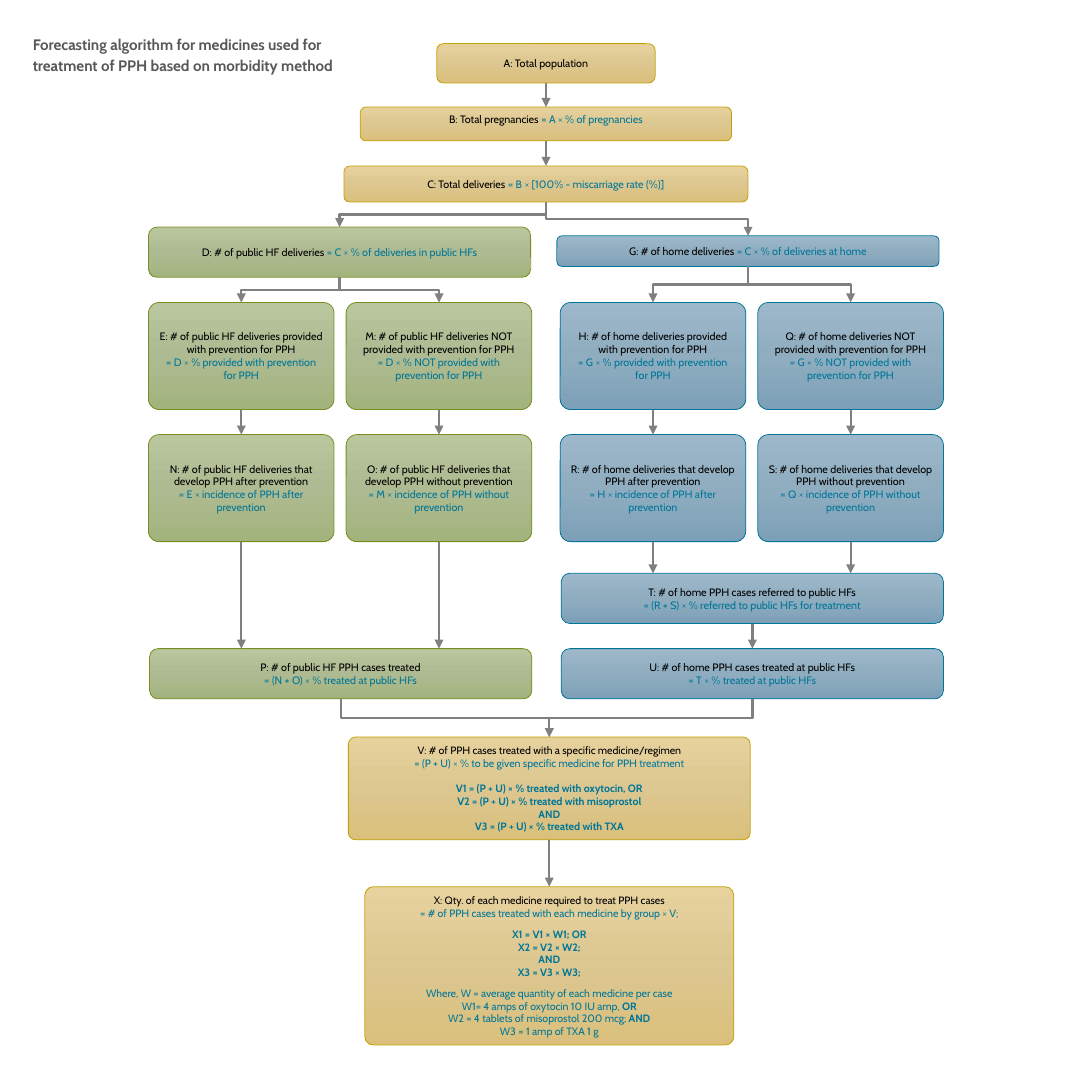
from copy import deepcopy

from pptx import Presentation
from pptx.dml.color import RGBColor as RGB
from pptx.enum.shapes import MSO_CONNECTOR as LINK, MSO_SHAPE as SHAPE
from pptx.enum.text import MSO_ANCHOR as ANCHOR, MSO_AUTO_SIZE as AUTO, PP_ALIGN as ALIGN
from pptx.oxml.ns import qn
from pptx.oxml.xmlchemy import OxmlElement as Node
from pptx.util import Inches, Pt

FONT = "Cabin"
BLACK, TEAL, GREY = "000000", "007698", "808080"
GOLD = ("C2A204", "E7D19D", "DDC790", "DAC07C")
GREEN = ("788E1E", "BAC69E", "AEBB92", "A3B37D")
BLUE = (TEAL, "9DB8CA", "90ADC0", "7CA0B7")
ROUND = 0.167

WIDE = [
    ("A", 4, 0.4, 2, 0.36, GOLD, "A: Total population", ""),
    ("B", 3.3, 0.98, 3.4, 0.31, GOLD, "B: Total pregnancies ", "= A × % of pregnancies"),
    ("C", 3.15, 1.52, 3.7, 0.33, GOLD, "C: Total deliveries ",
     "= B × [100% - miscarriage rate (%)]"),
    ("D", 1.36, 2.08, 3.5, 0.46, GREEN, "D: # of public HF deliveries ",
     "= C × % of deliveries in public HFs"),
    ("G", 5.1, 2.16, 3.5, 0.28, BLUE, "G: # of home deliveries ",
     "= C × % of deliveries at home"),
]
CARDS = [
    ("E", "E: # of public HF deliveries provided with prevention for PPH",
     "= D × % provided with prevention for PPH"),
    ("M", "M: # of public HF deliveries NOT provided with prevention for PPH",
     "= D × % NOT provided with prevention for PPH"),
    ("H", "H: # of home deliveries provided with prevention for PPH",
     "= G × % provided with prevention for PPH"),
    ("Q", "Q: # of home deliveries NOT provided with prevention for PPH",
     "= G × % NOT provided with prevention for PPH"),
    ("N", "N: # of public HF deliveries that develop PPH after prevention",
     "= E × incidence of PPH after prevention"),
    ("O", "O: # of public HF deliveries that develop PPH without prevention",
     "= M × incidence of PPH without prevention"),
    ("R", "R: # of home deliveries that develop PPH after prevention",
     "= H × incidence of PPH after prevention"),
    ("S", "S: # of home deliveries that develop PPH without prevention",
     "= Q × incidence of PPH without prevention"),
]
COLS = [(1.36, GREEN), (3.17, GREEN), (5.13, BLUE), (6.94, BLUE)]
ROWS = [2.77, 3.98]
CASES = [
    ("P", 1.37, 5.94, GREEN, "P: # of public HF PPH cases treated",
     "= (N + O) × % treated at public HFs"),
    ("T", 5.14, 5.25, BLUE, "T: # of home PPH cases referred to public HFs",
     "= (R + S) × % referred to public HFs for treatment"),
    ("U", 5.14, 5.94, BLUE, "U: # of home PPH cases treated at public HFs",
     "= T × % treated at public HFs"),
]
DOSES = [
    ("V", 3.19, 6.75, 3.68, 0.94, 0.068, [
        (0, "V: # of PPH cases treated with a specific medicine/regimen", ""),
        (0, "", "= (P + U) × % to be given specific medicine for PPH treatment"),
        (8.6, "", "", "V1 = (P + U) × % treated with oxytocin, OR"),
        (0, "", "", "V2 = (P + U) × % treated with misoprostol"),
        (0, "", "", "AND"),
        (0, "", "", "V3 = (P + U) × % treated with TXA")]),
    ("X", 3.34, 8.12, 3.38, 1.45, 0.055, [
        (0, "X: Qty. of each medicine required to treat PPH cases", ""),
        (0, "", "= # of PPH cases treated with each medicine by group × V;"),
        (5.4, "", "", "X1 = V1 × W1; OR"),
        (0, "", "", "X2 = V2 × W2;"),
        (0, "", "", "AND"),
        (0, "", "", "X3 = V3 × W3;"),
        (5.4, "", "Where, W = average quantity of each medicine per case"),
        (0, "", "W1= 4 amps of oxytocin 10 IU amp, ", "OR"),
        (0, "", "W2 = 4 tablets of misoprostol 200 mcg; ", "AND"),
        (0, "", "W3 = 1 amp of TXA 1 g")]),
]
FLOWS = "AB BC CD CG DE DM GH GQ EN MO HR QS TU PV UV VX".split()
DROPS = "NP OP RT ST".split()


def paint(hue):
    """Turn a hex string into a colour."""
    return RGB.from_string(hue)


def head(slide, text):
    """Place and format the slide title."""
    title = slide.shapes.title
    title.left, title.top = Inches(0.2), Inches(0.25)
    title.width, title.height = Inches(3.13), Inches(0.67)
    frame = title.text_frame
    frame.text = text
    frame.word_wrap, frame.auto_size = True, AUTO.NONE
    frame.vertical_anchor = ANCHOR.TOP
    para = frame.paragraphs[0]
    para.alignment, para.line_spacing = ALIGN.LEFT, 1.15
    para.space_before, para.space_after = Pt(6), Pt(18)
    font = para.font
    font.name, font.size, font.bold = FONT, Pt(10), True
    font.color.rgb = paint("595959")


def shade(shape, tone):
    """Give a shape its outline and three-stop gradient."""
    edge, *hues = tone
    shape.line.color.rgb = paint(edge)
    shape.line.width = Pt(0.5)
    fill = shape.fill
    fill.gradient()
    fill.gradient_angle = 270
    stops = shape.element.spPr.find(qn("a:gradFill")).find(qn("a:gsLst"))
    stops.insert(1, deepcopy(stops[0]))
    for stop, hue, place in zip(fill.gradient_stops, hues, (0, 0.5, 1)):
        stop.color.rgb = paint(hue)
        stop.position = place


def write(para, size, gap, label, rule="", strong=""):
    """Write a black label, a teal rule and a bold teal part on one line."""
    para.alignment, para.space_before = ALIGN.CENTER, Pt(gap)
    para.font.name, para.font.size = FONT, Pt(size)
    for text, hue, bold in ((label, BLACK, False), (rule, TEAL, False), (strong, TEAL, True)):
        if text:
            run = para.add_run()
            run.text = text
            run.font.color.rgb = paint(hue)
            run.font.bold = bold


def box(slide, x, y, w, h, tone, lines, curve=ROUND, size=7.1):
    """Draw a rounded box with centred lines."""
    shape = slide.shapes.add_shape(
        SHAPE.ROUNDED_RECTANGLE, Inches(x), Inches(y), Inches(w), Inches(h))
    shape.shadow.inherit = False
    shape.adjustments[0] = curve
    shade(shape, tone)
    frame = shape.text_frame
    frame.word_wrap, frame.vertical_anchor = True, ANCHOR.MIDDLE
    frame.margin_left = frame.margin_right = Inches(0.07)
    frame.margin_top = frame.margin_bottom = Inches(0.04)
    for i, line in enumerate(lines):
        para = frame.add_paragraph() if i else frame.paragraphs[0]
        write(para, size, *line)
    return shape


def arrow(slide, start, end, drop=False):
    """Link the foot of one box to the top of another, or drop straight down."""
    x1, y1 = start.left + start.width // 2, start.top + start.height
    x2, y2 = x1 if drop else end.left + end.width // 2, end.top
    bent = abs(x2 - x1) > Inches(0.05)
    line = slide.shapes.add_connector(LINK.ELBOW if bent else LINK.STRAIGHT, x1, y1, x2, y2)
    line.begin_connect(start, 2)
    if not drop:
        line.end_connect(end, 0)
    if bent:
        wide, high = abs(x2 - x1), y2 - y1
        line.left, line.top = (x1 + x2 - high) // 2, (y1 + y2 - wide) // 2
        line.width, line.height = high, wide
        form = line.element.spPr.find(qn("a:xfrm"))
        form.set("rot", "5400000" if x2 < x1 else "16200000")
        form.set("flipH", "0" if x2 < x1 else "1")
    line.line.color.rgb = paint(GREY)
    line.line.width = Pt(1.5)
    tip = Node("a:tailEnd")
    tip.set("type", "triangle")
    line.line._get_or_add_ln().append(tip)
    line.element.spPr.append(Node("a:effectLst"))


def main():
    """Build the flow chart slide."""
    deck = Presentation()
    deck.slide_width = deck.slide_height = Inches(10)
    slide = deck.slides.add_slide(deck.slide_layouts[5])
    head(slide, "Forecasting algorithm for medicines used for treatment of PPH "
                "based on morbidity method")
    nodes = {}
    for key, x, y, w, h, tone, label, rule in WIDE:
        nodes[key] = box(slide, x, y, w, h, tone, [(0, label, rule)])
    nodes["B"].text_frame.vertical_anchor = ANCHOR.TOP
    for i, (key, label, rule) in enumerate(CARDS):
        x, tone = COLS[i % 4]
        lines = [(0, label), (0, "", rule)]
        nodes[key] = box(slide, x, ROWS[i // 4], 1.7, 0.98, tone, lines, 0.1)
    for key, x, y, tone, label, rule in CASES:
        nodes[key] = box(slide, x, y, 3.5, 0.46, tone, [(0, label), (0, "", rule)])
    for key, x, y, w, h, curve, lines in DOSES:
        nodes[key] = box(slide, x, y, w, h, GOLD, lines, curve, 7)
    for start, end in FLOWS:
        arrow(slide, nodes[start], nodes[end])
    for start, end in DROPS:
        arrow(slide, nodes[start], nodes[end], True)
    deck.save("out.pptx")


if __name__ == "__main__":
    main()
